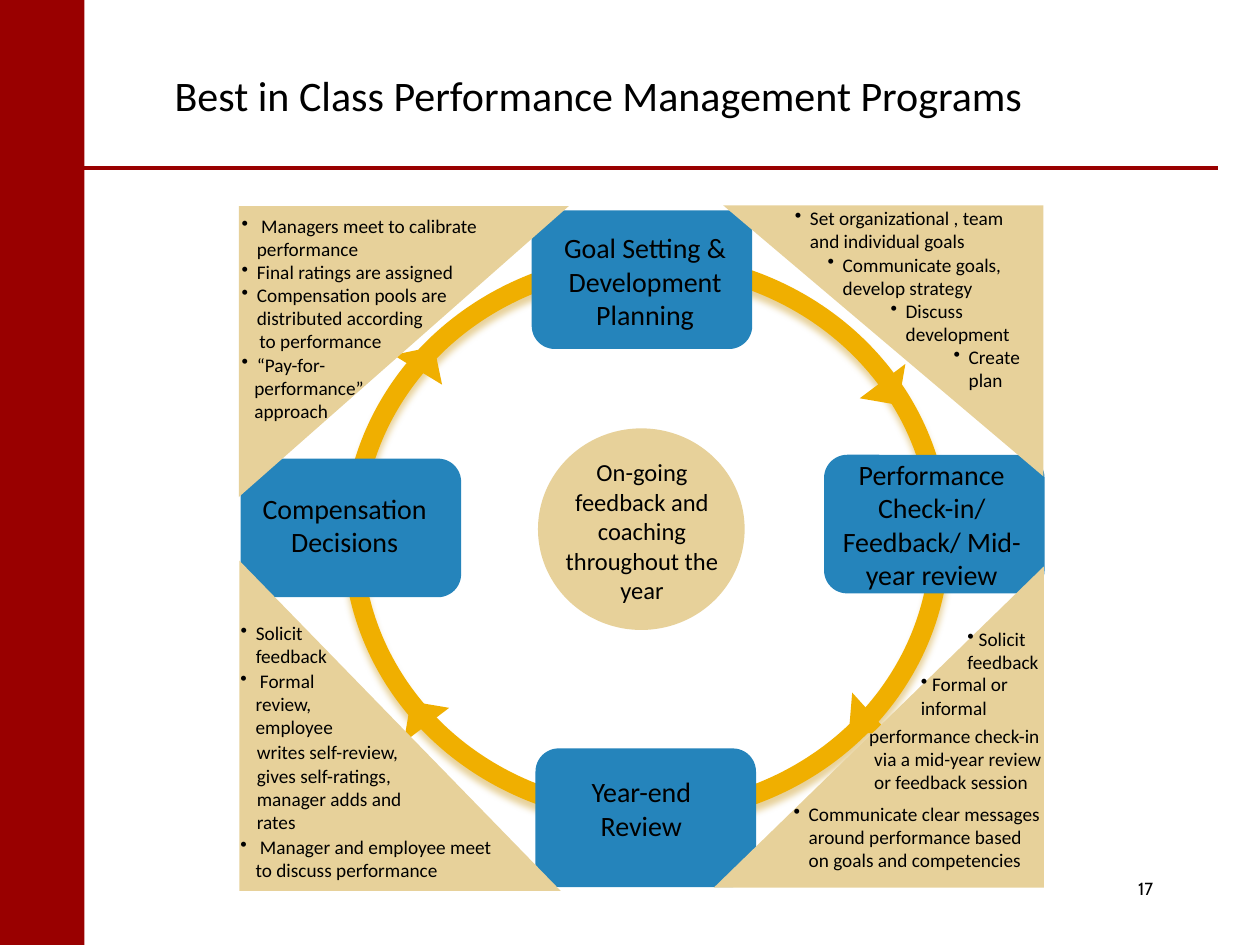
from lxml import etree
from pptx import Presentation
from pptx.dml.color import RGBColor
from pptx.enum.shapes import MSO_CONNECTOR, MSO_SHAPE
from pptx.enum.text import MSO_ANCHOR, PP_ALIGN
from pptx.oxml.ns import qn
from pptx.util import Inches, Pt

RECTANGLE = MSO_SHAPE.RECTANGLE
OVAL = MSO_SHAPE.OVAL
ROUNDED = MSO_SHAPE.ROUNDED_RECTANGLE
TRIANGLE = MSO_SHAPE.RIGHT_TRIANGLE
STRAIGHT = MSO_CONNECTOR.STRAIGHT
MIDDLE = MSO_ANCHOR.MIDDLE
LEFT, CENTER, RIGHT = PP_ALIGN.LEFT, PP_ALIGN.CENTER, PP_ALIGN.RIGHT

RED, TAN, GOLD, BLUE, BLACK = "990000", "E7D19A", "F0AF00", "2584BB", "000000"
WIDTH, HEIGHT, SIDEBAR = 10, 7.5, 0.67
TITLE = "Best in Class Performance Management Programs"
STAGE_SIZE = (1.75, 1.1)
ARROW_SIZE = (0.33, 0.31)
HANG = 0.12

STAGES = [
    ("Goal Setting & Development Planning", (4.22, 1.67), (4.24, 1.78, 1.76, 0.91)),
    ("Performance Check-in/ Feedback/ Mid-year review", (6.54, 3.61), (6.43, 3.58, 1.93, 1.18)),
    ("Year-end Review", (4.25, 5.94), (4.45, 6.1, 1.28, 0.64)),
    ("Compensation Decisions", (1.91, 3.64), (1.96, 3.85, 1.55, 0.64)),
]
ARROWS = [(6.84, 2.87, 279.8), (6.75, 5.51, 4.7), (3.22, 5.6, 99.6), (3.15, 2.78, 168.2)]
CORNERS = [
    ((5.7, 4.46, 2.55, 2.62), 270),
    ((2.05, 1.48, 2.31, 2.62), 90),
    ((1.9, 4.45, 2.55, 2.62), 0),
    ((5.74, 1.63, 2.54, 2.15), 180),
]
CENTRE = ("On-going feedback and coaching throughout the year", (4.35, 3.58, 1.49, 1.28))

NOTES = [
    ((6.21, 1.59, 2.06, 1.58), 0.1, [
        ("•", HANG, -HANG, "Set organizational , team and individual goals"),
        ("•", 0.38, -HANG, "Communicate goals, develop strategy"),
        ("•", 0.88, -HANG, "Discuss development"),
        ("•", 1.38, -HANG, "Create plan"),
    ]),
    ((7.58, 4.93, 0.81, 0.47), 0.1, [("•", 0, 0, " Solicit feedback")]),
    ((7.21, 5.29, 1.09, 0.47), 0.1, [("•", 0, 0, " Formal or informal")]),
    ((6.8, 5.7, 1.63, 0.66), 0.1, [
        ("", 0, 0, "performance check-in"),
        ("", 0.04, 0, "via a mid-year review"),
        ("", 0.04, 0, "or feedback session"),
    ]),
    ((6.2, 6.32, 2.17, 0.66), 0.1, [
        ("•", HANG, -HANG, "Communicate clear messages around performance based on goals and competencies"),
    ]),
    ((1.91, 4.88, 0.81, 0.47), 0, [("•", HANG, -HANG, "Solicit feedback")]),
    ((1.81, 5.26, 1.09, 0.66), 0.1, [("•", HANG, -HANG, " Formal review, employee")]),
    ((1.94, 5.83, 1.6, 0.84), 0.1, [
        ("", 0, 0, "writes self-review, gives self-ratings, manager adds and rates"),
    ]),
    ((1.81, 6.58, 2.25, 0.47), 0.1, [
        ("•", HANG, -HANG, " Manager and employee meet to discuss performance"),
    ]),
    ((1.82, 1.65, 2.25, 1.95), 0.1, [
        ("•", HANG, -HANG, " Managers meet to calibrate performance"),
        ("•", HANG, -HANG, "Final ratings are assigned"),
        ("•", HANG, -HANG, "Compensation pools are distributed according"),
        ("", 0.14, 0, "to performance"),
        ("•", HANG, -HANG, "“Pay-for-"),
        ("", 0.1, 0, "performance”"),
        ("", 0.1, 0, "approach"),
    ]),
]


def colour(value):
    return RGBColor.from_string(value)


def inches(lengths):
    return [Inches(length) for length in lengths]


def add_shape(page, kind, frame, fill, rotation=0):
    shape = page.shapes.add_shape(kind, *inches(frame))
    shape.shadow.inherit = False
    shape.fill.solid()
    shape.fill.fore_color.rgb = colour(fill)
    shape.line.fill.background()
    shape.rotation = rotation
    return shape


def add_span(para, text, size, font="Calibri"):
    span = para.add_run()
    span.text = text
    span.font.size = Pt(size)
    span.font.name = font
    span.font.color.rgb = colour(BLACK)


def add_text(page, frame, paragraphs, size, align=LEFT, font="Calibri", inset=0.1):
    box = page.shapes.add_textbox(*inches(frame))
    text_frame = box.text_frame
    text_frame.word_wrap = True
    text_frame.margin_left = text_frame.margin_right = Inches(inset)
    for index, (bullet, margin, indent, text) in enumerate(paragraphs):
        para = text_frame.add_paragraph() if index else text_frame.paragraphs[0]
        properties = para._p.get_or_add_pPr()
        properties.set("marL", str(Inches(margin)))
        properties.set("indent", str(Inches(indent)))
        if bullet:
            etree.SubElement(properties, qn("a:buChar"), char=bullet)
        para.alignment = align
        add_span(para, text, size, font)


def add_label(page, text, frame, size):
    add_text(page, frame, [("", 0, 0, text)], size, CENTER)


def add_title(page):
    title = page.shapes.title
    title.left, title.top, title.width, title.height = inches((0.75, 0.17, 8, 1.17))
    title.text_frame.vertical_anchor = MIDDLE
    para = title.text_frame.paragraphs[0]
    para.alignment = CENTER
    add_span(para, TITLE, 24)


def add_rule(page):
    rule = page.shapes.add_connector(STRAIGHT, *inches((SIDEBAR, 1.33, 9.67, 1.33)))
    rule.line.color.rgb = colour(RED)
    rule.line.width = Pt(2.25)
    etree.SubElement(rule._element.spPr, qn("a:effectLst"))


def add_ring(page):
    ring = add_shape(page, OVAL, (2.8, 2.08, 4.66, 4.38), GOLD)
    ring.fill.background()
    ring.line.color.rgb = colour(GOLD)
    ring.line.width = Pt(11)
    effects = ring._element.spPr.find(qn("a:effectLst"))
    shadow = etree.SubElement(effects, qn("a:outerShdw"), blurRad=str(Pt(4)),
                              dist=str(Pt(4)), dir="5400000", rotWithShape="0")
    etree.SubElement(shadow, qn("a:srgbClr"), val=TAN)


def main():
    deck = Presentation()
    deck.slide_width, deck.slide_height = inches((WIDTH, HEIGHT))
    page = deck.slides.add_slide(deck.slide_layouts[5])
    add_shape(page, RECTANGLE, (0, 0, SIDEBAR, HEIGHT), RED)
    add_rule(page)
    add_title(page)
    add_text(page, (7.92, 6.92, 1.33, 0.42), [("", 0, 0, "17")], 10, RIGHT, "Cabin")
    add_shape(page, OVAL, (4.27, 3.4, 1.64, 1.6), TAN)
    add_ring(page)
    for _, corner, _ in STAGES:
        add_shape(page, ROUNDED, corner + STAGE_SIZE, BLUE)
    for text, _, frame in STAGES:
        add_label(page, text, frame, 16)
    for left, top, rotation in ARROWS:
        add_shape(page, TRIANGLE, (left, top) + ARROW_SIZE, GOLD, rotation)
    for frame, rotation in CORNERS:
        add_shape(page, TRIANGLE, frame, TAN, rotation)
    for frame, inset, paragraphs in NOTES:
        add_text(page, frame, paragraphs, 11, inset=inset)
    add_label(page, *CENTRE, 14)
    deck.save("out.pptx")


if __name__ == "__main__":
    main()
